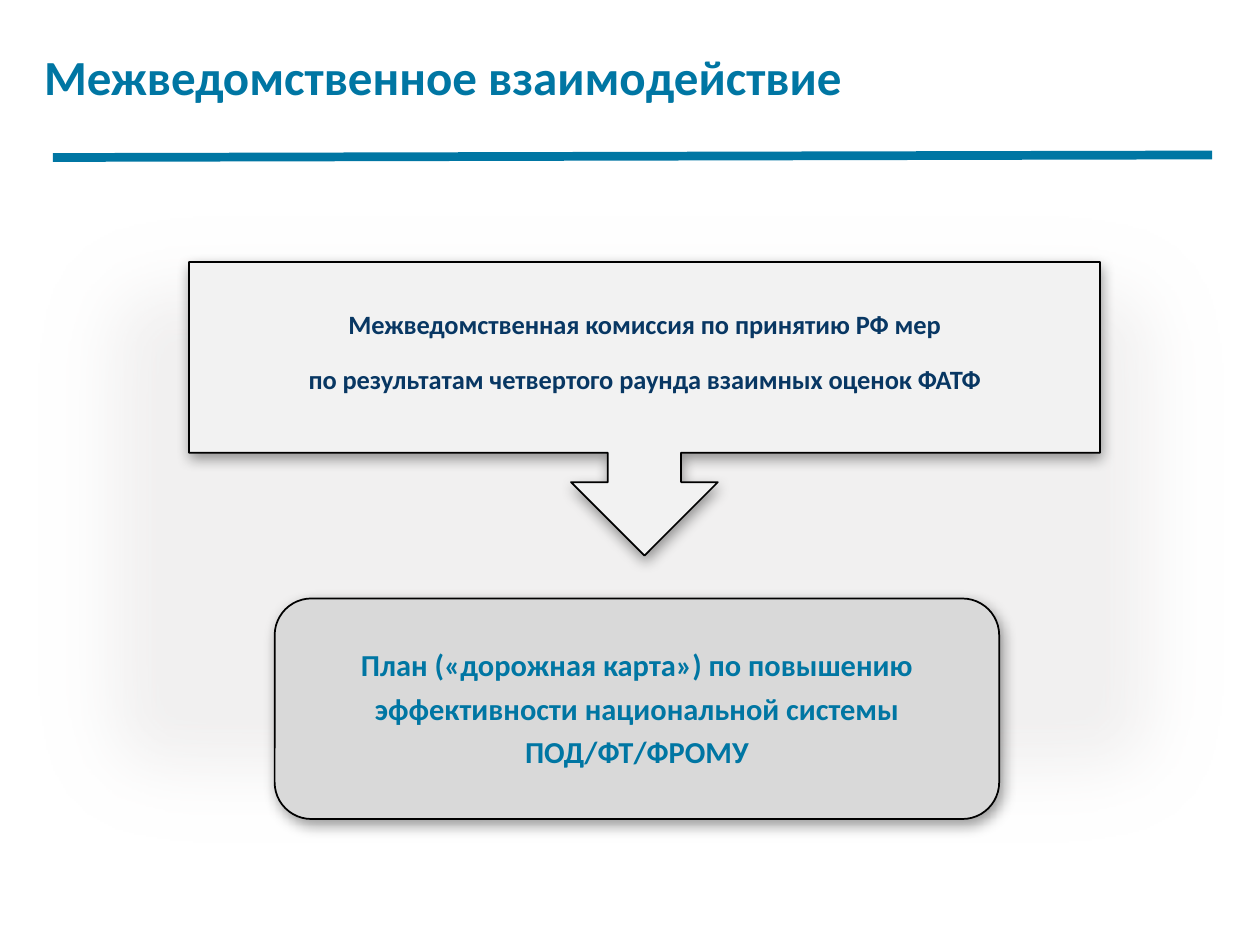
from lxml.etree import SubElement
from pptx import Presentation
from pptx.dml.color import RGBColor
from pptx.enum.shapes import MSO_CONNECTOR, MSO_SHAPE
from pptx.enum.text import MSO_ANCHOR, PP_ALIGN
from pptx.oxml.ns import qn
from pptx.util import Inches, Pt

TEAL = RGBColor(0x00, 0x76, 0xA3)
NAVY = RGBColor(0x08, 0x37, 0x63)
BLACK = RGBColor(0x00, 0x00, 0x00)
PALE = RGBColor(0xF2, 0xF2, 0xF2)
GRAY = RGBColor(0xD9, 0xD9, 0xD9)
PANEL = RGBColor(0xE7, 0xE6, 0xE6)
FONT = "Calibri"


def set_font(p, size, color):
    p.font.name, p.font.size, p.font.bold = FONT, Pt(size), True
    p.font.color.rgb = color


def add_effect(sp, tag, **attrs):
    sp.shadow.inherit = False
    effects = sp._element.spPr.find(qn("a:effectLst"))
    return SubElement(effects, qn(tag), **attrs)


def add_shadow(sp, angle):
    shadow = add_effect(sp, "a:outerShdw", blurRad=str(Pt(8)), dist=str(Pt(3)),
                        dir=str(angle * 60000), algn="tl", rotWithShape="0")
    color = SubElement(shadow, qn("a:srgbClr"), val=str(BLACK))
    SubElement(color, qn("a:alpha"), val="40000")


def add_title(slide, text):
    sp = slide.shapes.title
    sp.left, sp.top = Inches(0.25), Inches(0.37)
    sp.width, sp.height = Inches(9.37), Inches(0.53)
    tf = sp.text_frame
    tf.text = text
    tf.vertical_anchor = MSO_ANCHOR.MIDDLE
    p = tf.paragraphs[0]
    p.alignment, p.line_spacing = PP_ALIGN.LEFT, 0.9
    set_font(p, 28, TEAL)


def add_rule(slide):
    line = slide.shapes.add_connector(MSO_CONNECTOR.STRAIGHT, Inches(0.42), Inches(1.25),
                                      Inches(9.62), Inches(1.23))
    line.line.color.rgb, line.line.width = TEAL, Pt(5)
    SubElement(line._element.spPr, qn("a:effectLst"))


def add_panel(slide):
    """Translucent backdrop with soft edges."""
    sp = slide.shapes.add_shape(MSO_SHAPE.RECTANGLE, Inches(0), Inches(1.42),
                                Inches(10.02), Inches(5.58))
    sp.fill.solid()
    sp.fill.fore_color.rgb = PANEL
    color = sp._element.spPr.find(qn("a:solidFill")).find(qn("a:srgbClr"))
    SubElement(color, qn("a:alpha"), val="60000")
    sp.line.fill.background()
    add_effect(sp, "a:softEdge", rad=str(Pt(50)))


def add_block(slide, kind, box, fill, text, size, color, angle):
    sp = slide.shapes.add_shape(kind, *map(Inches, box))
    sp.fill.solid()
    sp.fill.fore_color.rgb = fill
    sp.line.color.rgb, sp.line.width = BLACK, Pt(1)
    add_shadow(sp, angle)
    tf = sp.text_frame
    tf.word_wrap = True
    tf.vertical_anchor = MSO_ANCHOR.MIDDLE
    p = tf.paragraphs[0]
    p.text = text
    p.alignment = PP_ALIGN.CENTER
    set_font(p, size, color)
    # Raised text is drawn smaller than its nominal size
    for r in p.runs:
        r._r.get_or_add_rPr().set("baseline", "30000")
    return sp


def main():
    prs = Presentation()
    prs.slide_width, prs.slide_height = Inches(10), Inches(7.5)
    slide = prs.slides.add_slide(prs.slide_layouts[5])

    # Heading
    add_title(slide, "Межведомственное взаимодействие")
    add_rule(slide)

    # Commission leading to the plan
    add_panel(slide)
    plan = add_block(slide, MSO_SHAPE.ROUNDED_RECTANGLE, (2.18, 4.75, 5.75, 1.75), GRAY,
                     "План («дорожная карта») по повышению эффективности "
                     "национальной системы ПОД/ФТ/ФРОМУ", 30, TEAL, 60)
    plan.text_frame.margin_top = Inches(0.3)
    plan.text_frame.paragraphs[0].line_spacing = Pt(25)
    add_block(slide, MSO_SHAPE.DOWN_ARROW_CALLOUT, (1.5, 2.08, 7.23, 2.33), PALE,
              "Межведомственная комиссия по принятию РФ мер\v"
              "по результатам четвертого раунда взаимных оценок ФАТФ", 26, NAVY, 80)

    prs.save("out.pptx")


if __name__ == "__main__":
    main()
